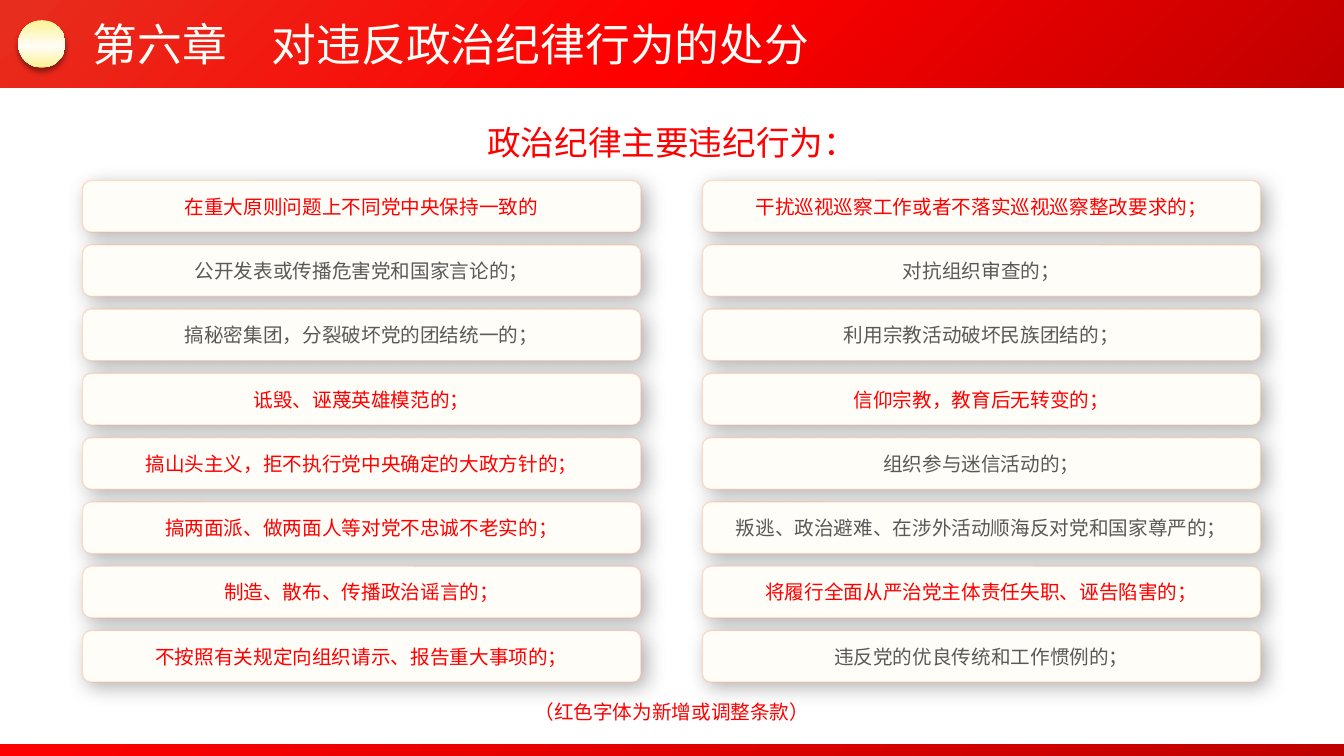
from lxml import etree
from pptx import Presentation
from pptx import util as u
from pptx.dml.color import RGBColor
from pptx.enum import shapes, text
from pptx.oxml.ns import qn

FONT = "Noto Sans CJK SC"
COLORS = {
    "red": "FF0000", "dark_red": "C00000", "orange_red": "E72E1E",
    "gold": "FDF394", "cream": "FFFDF8", "peach": "FFA075",
    "gray": "595959", "black": "000000",
}
RED = ([(0, "red"), (100, "dark_red")], 45)
HEADER = ([(0, "orange_red"), (50, "red"), (100, "dark_red")], 45)
GOLD = ([(0, "gold"), (55, "cream"), (100, "gold")], 90)
# Each shadow: opacity %, blur pt, distance pt, direction in degrees
EMBLEM_SHADOW = (40, 4, 3, 90)
CARD_SHADOW = (30, 15, 5, 45)


def paint(fill, element, look):
    """Fill with a colour name or with (stops, clockwise angle); element holds the fill."""
    if isinstance(look, str):
        fill.solid()
        fill.fore_color.rgb = RGBColor.from_string(COLORS[look])
        return
    stops, angle = look
    fill.gradient()
    gradient = element.find(".//" + qn("a:gradFill"))
    stop_list = gradient.find(qn("a:gsLst"))
    for stop in list(stop_list):
        stop_list.remove(stop)
    for position, name in stops:
        stop = etree.SubElement(stop_list, qn("a:gs"), pos=str(position * 1000))
        etree.SubElement(stop, qn("a:srgbClr"), val=COLORS[name])
    gradient.find(qn("a:lin")).set("ang", str(angle * 60000))


def write(box, wording, size, look, align=text.PP_ALIGN.CENTER):
    para = box.text_frame.paragraphs[0]
    para.alignment = align
    span = para.add_run()
    span.text = wording
    for name, value in {"name": FONT, "size": u.Pt(size)}.items():
        setattr(span.font, name, value)
    properties = span._r.get_or_add_rPr()
    paint(span.font.fill, properties, look)
    etree.SubElement(properties, qn("a:ea"), typeface=FONT)


deck = Presentation()
deck.slide_width, deck.slide_height = u.Cm(33.87), u.Cm(19.05)
page = deck.slides.add_slide(deck.slide_layouts[6])

cards = []
columns = [
    [
        ("在重大原则问题上不同党中央保持一致的", RED),
        ("公开发表或传播危害党和国家言论的；", "gray"),
        ("搞秘密集团，分裂破坏党的团结统一的；", "gray"),
        ("诋毁、诬蔑英雄模范的；", RED),
        ("搞山头主义，拒不执行党中央确定的大政方针的；", RED),
        ("搞两面派、做两面人等对党不忠诚不老实的；", RED),
        ("制造、散布、传播政治谣言的；", RED),
        ("不按照有关规定向组织请示、报告重大事项的；", RED),
    ],
    [
        ("干扰巡视巡察工作或者不落实巡视巡察整改要求的；", RED),
        ("对抗组织审查的；", "gray"),
        ("利用宗教活动破坏民族团结的；", "gray"),
        ("信仰宗教，教育后无转变的；", RED),
        ("组织参与迷信活动的；", "gray"),
        ("叛逃、政治避难、在涉外活动顺海反对党和国家尊严的；", "gray"),
        ("将履行全面从严治党主体责任失职、诬告陷害的；", RED),
        ("违反党的优良传统和工作惯例的；", "gray"),
    ],
]
for column, entries in enumerate(columns):
    for row, (wording, look) in enumerate(entries):
        place = (2.08 + 15.62 * column, 4.55 + 1.62 * row, 14.07, 1.3)
        cards.append((place, wording, look))

# Bars, emblem and cards
KIND = shapes.MSO_SHAPE
figures = [
    (KIND.RECTANGLE, (0, 18.75, 33.87, 0.3), RED, None, None),
    (KIND.RECTANGLE, (0, 0, 33.87, 2.21), HEADER, None, None),
    (KIND.OVAL, (0.46, 0.51, 1.19, 1.19), GOLD, EMBLEM_SHADOW, None),
]
for place, wording, look in cards:
    figures.append((KIND.ROUNDED_RECTANGLE, place, "cream", CARD_SHADOW, (wording, look)))

for kind, place, fill, shadow, label in figures:
    figure = page.shapes.add_shape(kind, *map(u.Cm, place))
    properties = figure._element.spPr
    figure.shadow.inherit = False
    paint(figure.fill, properties, fill)
    figure.line.fill.background()
    if shadow:
        opacity, blur, distance, direction = shadow
        outer = etree.SubElement(
            properties.find(qn("a:effectLst")), qn("a:outerShdw"),
            blurRad=str(u.Pt(blur)), dist=str(u.Pt(distance)),
            dir=str(direction * 60000), algn="tl", rotWithShape="0")
        tint = etree.SubElement(outer, qn("a:srgbClr"), val=COLORS["black"])
        etree.SubElement(tint, qn("a:alpha"), val=str(opacity * 1000))
    if label:
        figure.line.width = u.Pt(1)
        paint(figure.line.fill, properties, "peach")
        edge = properties.find(qn("a:ln")).find(".//" + qn("a:srgbClr"))
        etree.SubElement(edge, qn("a:alpha"), val="30000")
        figure.text_frame.word_wrap = True
        figure.text_frame.vertical_anchor = text.MSO_ANCHOR.MIDDLE
        write(figure, label[0], 14, label[1])

# Headings and footnote
ALIGN = text.PP_ALIGN
headings = [
    ((2.08, 0.3, 18.75, 1.63), "第六章　对违反政治纪律行为的处分", 32, GOLD, ALIGN.LEFT, False),
    ((11.15, 2.95, 11.58, 1.27), "政治纪律主要违纪行为：", 24, RED, ALIGN.CENTER, True),
    ((9.3, 17.5, 15.27, 0.86), "（红色字体为新增或调整条款）", 14, RED, ALIGN.CENTER, True),
]
for place, wording, size, look, align, wrap in headings:
    box = page.shapes.add_textbox(*map(u.Cm, place))
    box.text_frame.word_wrap = wrap
    box.text_frame.auto_size = text.MSO_AUTO_SIZE.SHAPE_TO_FIT_TEXT
    write(box, wording, size, look, align)

deck.save("out.pptx")
